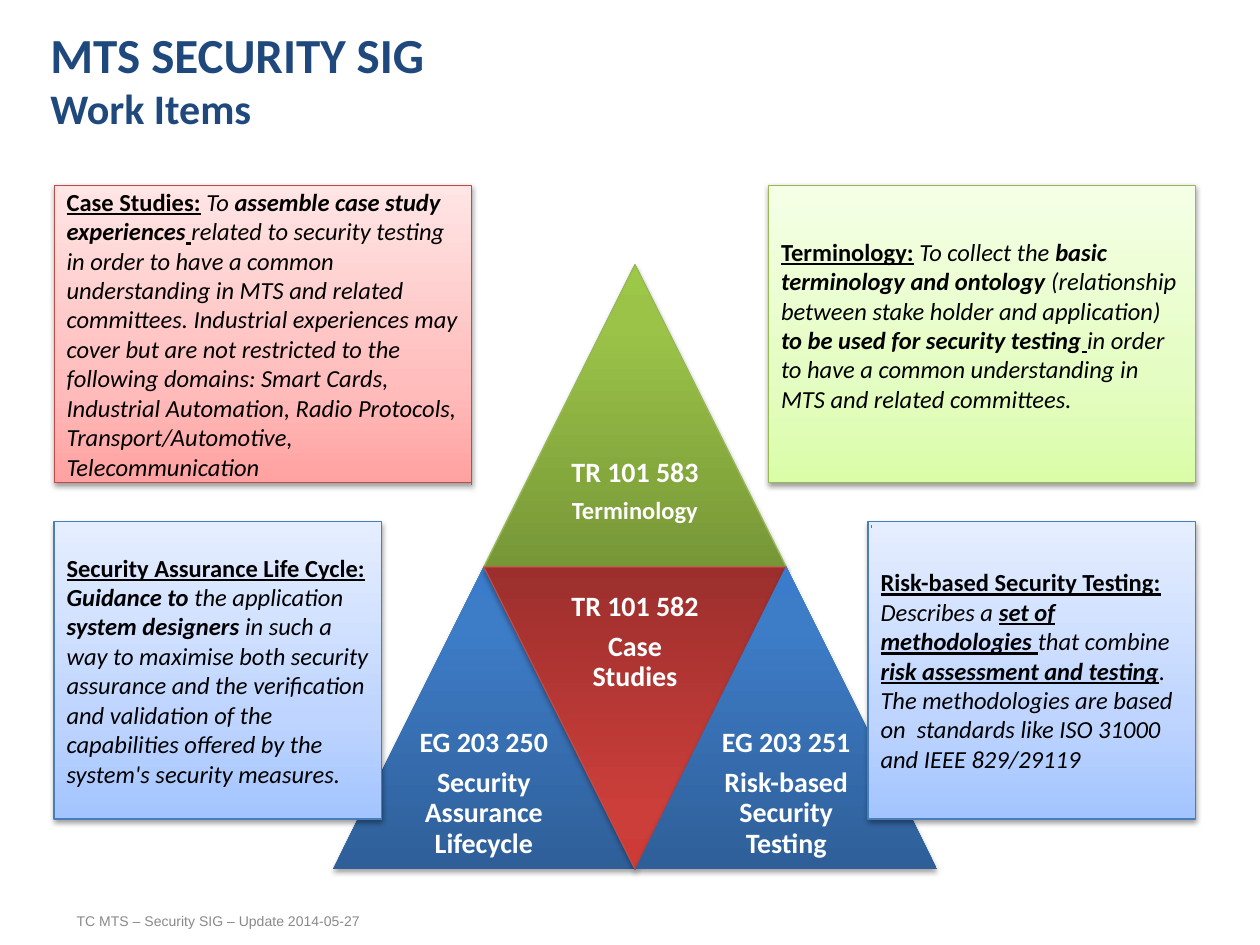
from dataclasses import dataclass

from lxml.etree import SubElement
from pptx import Presentation
from pptx.dml.color import RGBColor
from pptx.enum.shapes import MSO_SHAPE as Shape
from pptx.enum.text import MSO_ANCHOR as Anchor, MSO_AUTO_SIZE as AutoSize, PP_ALIGN as Align
from pptx.oxml.ns import qn
from pptx.util import Inches, Pt


@dataclass(frozen=True)
class Palette:
    stops: tuple  # (position in %, colour), from bottom to top
    line: str = ""


@dataclass(frozen=True)
class Theme:
    font: str = "Calibri"
    footer_font: str = "Arial"
    title: str = "1F497D"
    body: str = "000000"
    label: str = "FFFFFF"
    footer: str = "898989"
    title_size: int = 28
    subtitle_size: int = 24
    label_size: int = 16
    body_size: int = 14
    footer_size: int = 8
    # Pyramid parts
    green: Palette = Palette(((0, "779737"), (80, "9BC348"), (100, "9DC746")), "98B955")
    blue: Palette = Palette(((0, "2F5F99"), (80, "3D7CC7"), (100, "3A7CCB")))
    red: Palette = Palette(((0, "9C2F2D"), (80, "CB3E3A"), (100, "CE3B37")), "BF4C48")
    # Callouts
    pale_red: Palette = Palette(((0, "FFA2A1"), (35, "FFBEBD"), (100, "FFE5E5")), "BE4B48")
    pale_blue: Palette = Palette(((0, "A3C4FF"), (35, "BFD5FF"), (100, "E5EEFF")), "4A7EBB")
    pale_green: Palette = Palette(((0, "DAFDA7"), (35, "E4FDC2"), (100, "F5FFE6")), "98B954")


THEME = Theme()

# Pyramid: column and row in half-sides, palette, pointing down, label lines with sizes
SIDE, PYRAMID_LEFT, PYRAMID_TOP = 2.4, 2.64, 2.1
PYRAMID = [
    (1, 0, THEME.green, False, [("TR 101 583", THEME.label_size), ("Terminology", THEME.body_size)]),
    (0, 2, THEME.blue, False,
     [("EG 203 250", THEME.label_size), ("Security Assurance Lifecycle", THEME.label_size)]),
    (1, 2, THEME.red, True, [("TR 101 582", THEME.label_size), ("Case Studies", THEME.label_size)]),
    (2, 2, THEME.blue, False,
     [("EG 203 251", THEME.label_size), ("Risk-based Security Testing", THEME.label_size)]),
]

# Callouts: left, top, width, pointer, palette, bottom inset, runs (b bold, i italic, u underlined)
LEFT, RIGHT, UPPER, LOWER, CALLOUT_HEIGHT = 0.43, 9.49, 1.47, 4.14, 2.36
CALLOUTS = [
    (LEFT, UPPER, 3.31, (1, 1, 1.01, 1), THEME.pale_red, 0.05, [
        ("Case Studies:", "bu"), (" ", "b"), ("To ", "i"),
        ("assemble case study experiences", "bi"), (" ", "biu"),
        ("related to security testing in order to have a common understanding in MTS and "
         "related committees. Industrial experiences may cover but are not restricted to the "
         "following domains: Smart Cards, Industrial Automation, Radio Protocols, "
         "Transport/Automotive, Telecommunication", "i")]),
    (LEFT, LOWER, 2.6, (0.49, 1, 0.49, 1), THEME.pale_blue, 0.05, [
        ("Security Assurance Life Cycle: ", "bu"), ("Guidance to ", "bi"),
        ("the application ", "i"), ("system designers ", "bi"),
        ("in such a way to maximise both security assurance and the verification and "
         "validation of the capabilities offered by the system's security measures.", "i")]),
    (RIGHT - 3.39, UPPER, 3.39, (1, 0, 1, 0.01), THEME.pale_green, 0.19, [
        ("Terminology:", "bu"), (" To collect the ", "i"),
        ("basic terminology and ontology ", "bi"),
        ("(relationship between stake holder and application) ", "i"),
        ("to be used for security testing", "bi"), (" ", "biu"),
        ("in order to have a common understanding in MTS and related committees.", "i")]),
    (RIGHT - 2.6, LOWER, 2.6, (0.01, 0.01, 0.02, 0.01), THEME.pale_blue, 0.05, [
        ("Risk-based Security Testing: ", "bu"), ("Describes a ", "i"),
        ("set of methodologies ", "biu"), ("that combine ", "i"),
        ("risk assessment and testing", "biu"),
        (". The methodologies are based on  standards like ISO 31000 and IEEE 829/29119", "i")]),
]


def add_run(paragraph, text, size, color, marks="", font=THEME.font):
    run = paragraph.add_run()
    run.text = text
    run.font.name, run.font.size = font, Pt(size)
    run.font.color.rgb = RGBColor.from_string(color)
    run.font.bold, run.font.italic, run.font.underline = (mark in marks for mark in "biu")


def paint(shape, palette, shadow_alpha, shadow_distance):
    """Give a shape its upward gradient, outline and soft shadow below."""
    shape.fill.gradient()
    shape.fill.gradient_angle = 90
    stop_list = shape._element.spPr.find(".//" + qn("a:gsLst"))
    for old_stop in list(stop_list):
        stop_list.remove(old_stop)
    for position, color in palette.stops:
        stop = SubElement(stop_list, qn("a:gs"), pos=str(position * 1000))
        SubElement(stop, qn("a:srgbClr"), val=color)

    if palette.line:
        shape.line.color.rgb = RGBColor.from_string(palette.line)
        shape.line.width = Pt(0.75)
    else:
        shape.line.fill.background()

    shape.shadow.inherit = False
    effects = shape._element.spPr.find(qn("a:effectLst"))
    shadow = SubElement(effects, qn("a:outerShdw"), blurRad=str(Pt(3.1)),
                        dist=str(Pt(shadow_distance)), dir="5400000", rotWithShape="0")
    black = SubElement(shadow, qn("a:srgbClr"), val="000000")
    SubElement(black, qn("a:alpha"), val=str(shadow_alpha * 1000))


def add_title(slide):
    title = slide.shapes.title
    title.left, title.top, title.width, title.height = Inches(0.3), 0, Inches(9), Inches(1.25)
    frame = title.text_frame
    frame.vertical_anchor, frame.auto_size = Anchor.MIDDLE, AutoSize.NONE
    heading = frame.paragraphs[0]
    heading.alignment = Align.LEFT
    add_run(heading, "MTS SECURITY SIG ", THEME.title_size, THEME.title, "b")
    heading.add_line_break()
    add_run(heading, "Work Items", THEME.subtitle_size, THEME.title, "b")


def add_pyramid_part(group, column, row, palette, points_down, lines):
    half = SIDE / 2
    left, top = PYRAMID_LEFT + column * half, PYRAMID_TOP + row * half
    triangle = group.shapes.add_shape(Shape.ISOSCELES_TRIANGLE, Inches(left), Inches(top),
                                      Inches(SIDE), Inches(SIDE))
    triangle.rotation = 180 if points_down else 0
    paint(triangle, palette, 35, 1.8)

    # The label fills the wide half of the triangle
    label_top = top if points_down else top + half
    label = group.shapes.add_textbox(Inches(left + half / 2), Inches(label_top),
                                     Inches(half), Inches(half))
    frame = label.text_frame
    frame.word_wrap, frame.vertical_anchor = True, Anchor.MIDDLE
    frame.margin_left = frame.margin_right = Inches(0.07)
    frame.margin_top = frame.margin_bottom = Inches(0.07)
    for index, (text, size) in enumerate(lines):
        line = frame.add_paragraph() if index else frame.paragraphs[0]
        line.alignment, line.line_spacing, line.space_after = Align.CENTER, 0.9, Pt(5.6)
        add_run(line, text, size, THEME.label, "b")


def add_callout(slide, left, top, width, pointer, palette, bottom_inset, runs):
    callout = slide.shapes.add_shape(Shape.LINE_CALLOUT_1, Inches(left), Inches(top),
                                     Inches(width), Inches(CALLOUT_HEIGHT))
    for index, value in enumerate(pointer):
        callout.adjustments[index] = value
    paint(callout, palette, 38, 1.6)
    frame = callout.text_frame
    frame.word_wrap, frame.vertical_anchor = True, Anchor.MIDDLE
    frame.margin_bottom = Inches(bottom_inset)
    frame.paragraphs[0].alignment = Align.LEFT
    for text, marks in runs:
        add_run(frame.paragraphs[0], text, THEME.body_size, THEME.body, marks)


def add_footer(slide):
    footer = slide.shapes.add_textbox(Inches(0.51), Inches(7.11), Inches(5.7), Inches(0.4))
    footer.text_frame.word_wrap = True
    footer.text_frame.vertical_anchor = Anchor.MIDDLE
    add_run(footer.text_frame.paragraphs[0], "TC MTS – Security SIG – Update 2014-05-27",
            THEME.footer_size, THEME.footer, font=THEME.footer_font)


def main():
    deck = Presentation()
    deck.slide_width, deck.slide_height = Inches(10), Inches(7.5)
    slide = deck.slides.add_slide(deck.slide_layouts.get_by_name("Title Only"))

    add_title(slide)
    pyramid = slide.shapes.add_group_shape()
    for part in PYRAMID:
        add_pyramid_part(pyramid, *part)
    for callout in CALLOUTS:
        add_callout(slide, *callout)
    add_footer(slide)

    deck.save("out.pptx")


if __name__ == "__main__":
    main()
